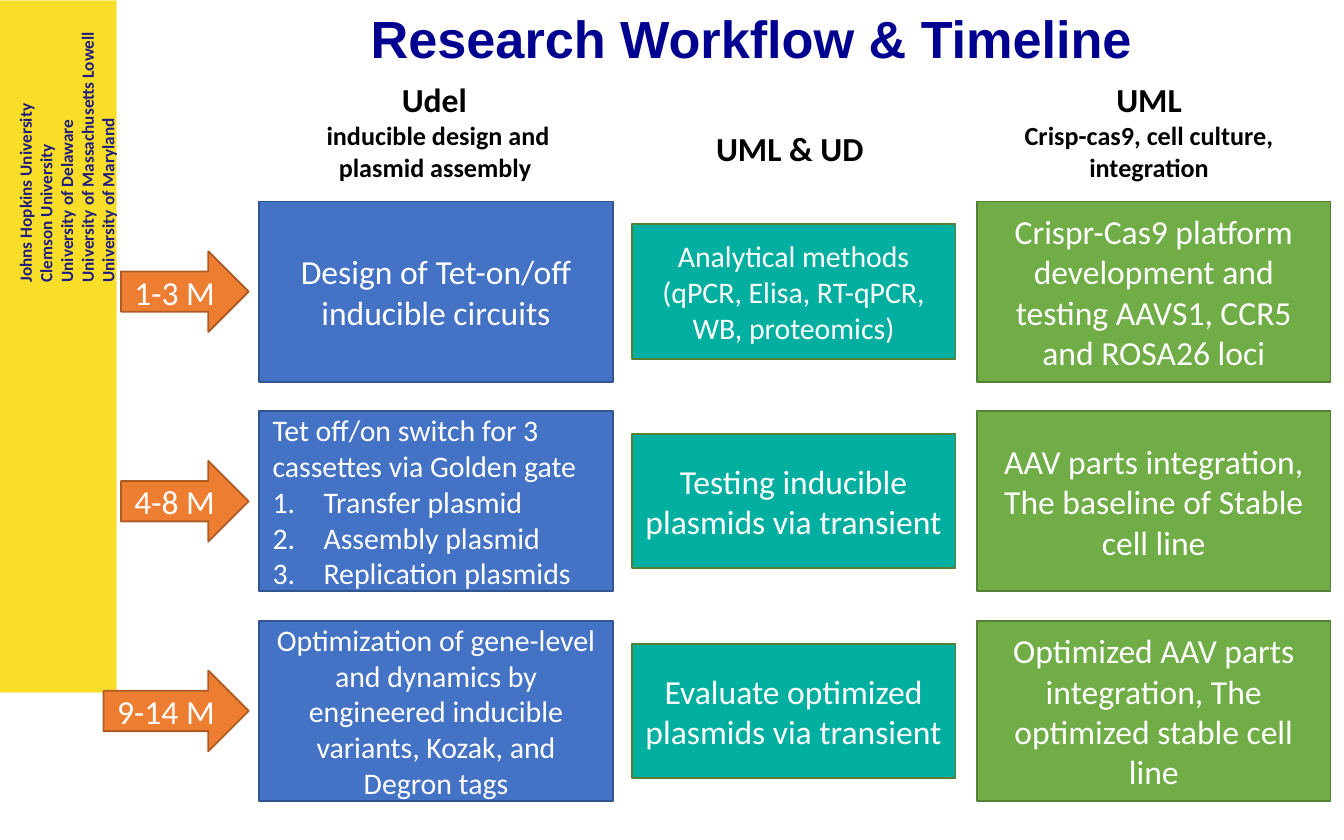
from dataclasses import dataclass

from lxml import etree
from pptx import Presentation
from pptx.dml.color import RGBColor
from pptx.enum.shapes import MSO_SHAPE
from pptx.enum.text import MSO_ANCHOR, MSO_AUTO_SIZE, PP_ALIGN
from pptx.oxml.ns import qn
from pptx.util import Inches, Pt

RECTANGLE = MSO_SHAPE.RECTANGLE
RIGHT_ARROW = MSO_SHAPE.RIGHT_ARROW
LEFT, CENTER = PP_ALIGN.LEFT, PP_ALIGN.CENTER
TOP, MIDDLE = MSO_ANCHOR.TOP, MSO_ANCHOR.MIDDLE
GROW = MSO_AUTO_SIZE.SHAPE_TO_FIT_TEXT


@dataclass(frozen=True)
class Theme:
    yellow: str = "F8DE28"
    yellow_line: str = "FBEC85"
    navy: str = "211D7D"
    title_blue: str = "000090"
    black: str = "000000"
    white: str = "FFFFFF"
    blue: tuple = ("4472C4", "325491")
    teal: tuple = ("00AF9F", "538035")
    green: tuple = ("70AD47", "538035")
    orange: tuple = ("ED7D31", "AF5C24")
    body_font: str = "Calibri"
    title_font: str = "Arial"
    title_size: float = 28
    large: float = 18
    medium: float = 16
    small: float = 14
    sidebar_size: float = 9.2


THEME = Theme()

FIRST_CENTER, ROW_STEP = 2.17, 1.56
ARROW_RIGHT, ARROW_HEIGHT = 1.85, 0.6

UNIVERSITIES = [
    "Johns Hopkins University",
    "Clemson University",
    "University of Delaware",
    "University of Massachusetts Lowell",
    "University of Maryland",
]

# Label and arrow width of each period
PERIODS = [("1-3 M", 0.95), ("4-8 M", 0.95), ("9-14 M", 1.08)]

PLASMIDS = ["Transfer plasmid", "Assembly plasmid", "Replication plasmids"]

# Left, width, height, colours, then text and type size of each row
COLUMNS = [
    (1.93, 2.63, 1.34, THEME.blue, [
        ("Design of Tet-on/off inducible circuits", THEME.large),
        None,  # the cassette box holds a numbered list
        ("Optimization of gene-level and dynamics by engineered inducible "
         "variants, Kozak, and Degron tags", THEME.medium),
    ]),
    (4.7, 2.41, 1, THEME.teal, [
        ("Analytical methods (qPCR, Elisa, RT-qPCR, WB, proteomics)", THEME.medium),
        ("Testing inducible plasmids via transient ", THEME.large),
        ("Evaluate optimized plasmids via transient ", THEME.large),
    ]),
    (7.27, 2.63, 1.34, THEME.green, [
        ("Crispr-Cas9 platform development and testing AAVS1, CCR5 and ROSA26 loci",
         THEME.large),
        ("AAV parts integration, The baseline of Stable cell line", THEME.large),
        ("Optimized AAV parts integration, The optimized stable cell line", THEME.large),
    ]),
]


def color(value):
    return RGBColor.from_string(value)


def row_top(row, height):
    """Top of an element centred on the given row."""
    return FIRST_CENTER + row * ROW_STEP - height / 2


def number_paragraph(paragraph):
    properties = paragraph._p.get_or_add_pPr()
    properties.set("marL", str(Inches(0.38)))
    properties.set("indent", str(-Inches(0.38)))
    etree.SubElement(properties, qn("a:buAutoNum"), type="arabicPeriod")


def write(frame, lines, text_color, align=CENTER, bold=False,
          font_name=THEME.body_font, numbered_from=None):
    """Write (text, size) lines; those from numbered_from on get numbers."""
    for index, (text, size) in enumerate(lines):
        paragraph = frame.paragraphs[0] if index == 0 else frame.add_paragraph()
        paragraph.text = text
        paragraph.alignment = align
        if numbered_from is not None and index >= numbered_from:
            number_paragraph(paragraph)
        font = paragraph.font
        font.name = font_name
        font.size = Pt(size)
        font.bold = bold
        font.color.rgb = color(text_color)


def add_filled_shape(slide, kind, left, top, width, height, fill, line=None, line_width=1):
    shape = slide.shapes.add_shape(
        kind, Inches(left), Inches(top), Inches(width), Inches(height))
    shape.shadow.inherit = False
    shape.fill.solid()
    shape.fill.fore_color.rgb = color(fill)
    if line:
        shape.line.color.rgb = color(line)
        shape.line.width = Pt(line_width)
    else:
        shape.line.fill.background()
    shape.text_frame.word_wrap = True
    shape.text_frame.vertical_anchor = MIDDLE
    return shape


def add_text(slide, left, top, width, height, lines, text_color=THEME.black, **style):
    box = slide.shapes.add_textbox(
        Inches(left), Inches(top), Inches(width), Inches(height))
    box.text_frame.word_wrap = True
    box.text_frame.auto_size = GROW
    write(box.text_frame, lines, text_color, bold=True, **style)


def add_sidebar(slide):
    add_filled_shape(slide, RECTANGLE, 0, 0, 0.87, 5.15,
                     THEME.yellow, THEME.yellow_line, 0.5)
    label = add_filled_shape(slide, RECTANGLE, -0.6, 0.78, 2.08, 0.76, THEME.yellow)
    label.rotation = 270
    frame = label.text_frame
    frame.word_wrap = False
    frame.auto_size = GROW
    frame.vertical_anchor = TOP
    write(frame, [(name, THEME.sidebar_size) for name in UNIVERSITIES],
          THEME.navy, align=LEFT, bold=True)


def add_headings(slide):
    add_text(slide, 2.66, 0, 5.93, 0.57,
             [("Research Workflow & Timeline", THEME.title_size)],
             THEME.title_blue, align=LEFT, font_name=THEME.title_font)
    add_text(slide, 2.3, 0.54, 1.92, 0.88,
             [("Udel ", THEME.large),
              ("inducible design and plasmid assembly ", THEME.small)])
    add_text(slide, 5.23, 0.9, 1.66, 0.4, [("UML & UD", THEME.large)], align=LEFT)
    add_text(slide, 7.4, 0.54, 2.3, 0.88,
             [("UML", THEME.large),
              ("Crisp-cas9, cell culture, integration", THEME.small)])


def add_steps(slide):
    for left, width, height, colors, steps in COLUMNS:
        for row, step in enumerate(steps):
            box = add_filled_shape(slide, RECTANGLE, left, row_top(row, height),
                                   width, height, *colors)
            if step:
                write(box.text_frame, [step], THEME.white)
            else:
                texts = ["Tet off/on switch for 3 cassettes via Golden gate", *PLASMIDS]
                write(box.text_frame, [(text, THEME.medium) for text in texts],
                      THEME.white, align=LEFT, numbered_from=1)


def add_periods(slide):
    for row, (label, width) in enumerate(PERIODS):
        arrow = add_filled_shape(slide, RIGHT_ARROW, ARROW_RIGHT - width,
                                 row_top(row, ARROW_HEIGHT), width, ARROW_HEIGHT,
                                 *THEME.orange)
        write(arrow.text_frame, [(label, THEME.large)], THEME.white)


def main():
    presentation = Presentation()
    presentation.slide_width = Inches(10)
    presentation.slide_height = Inches(6.25)
    slide = presentation.slides.add_slide(presentation.slide_layouts[6])
    add_sidebar(slide)
    add_headings(slide)
    add_steps(slide)
    add_periods(slide)
    presentation.save("out.pptx")


if __name__ == "__main__":
    main()
